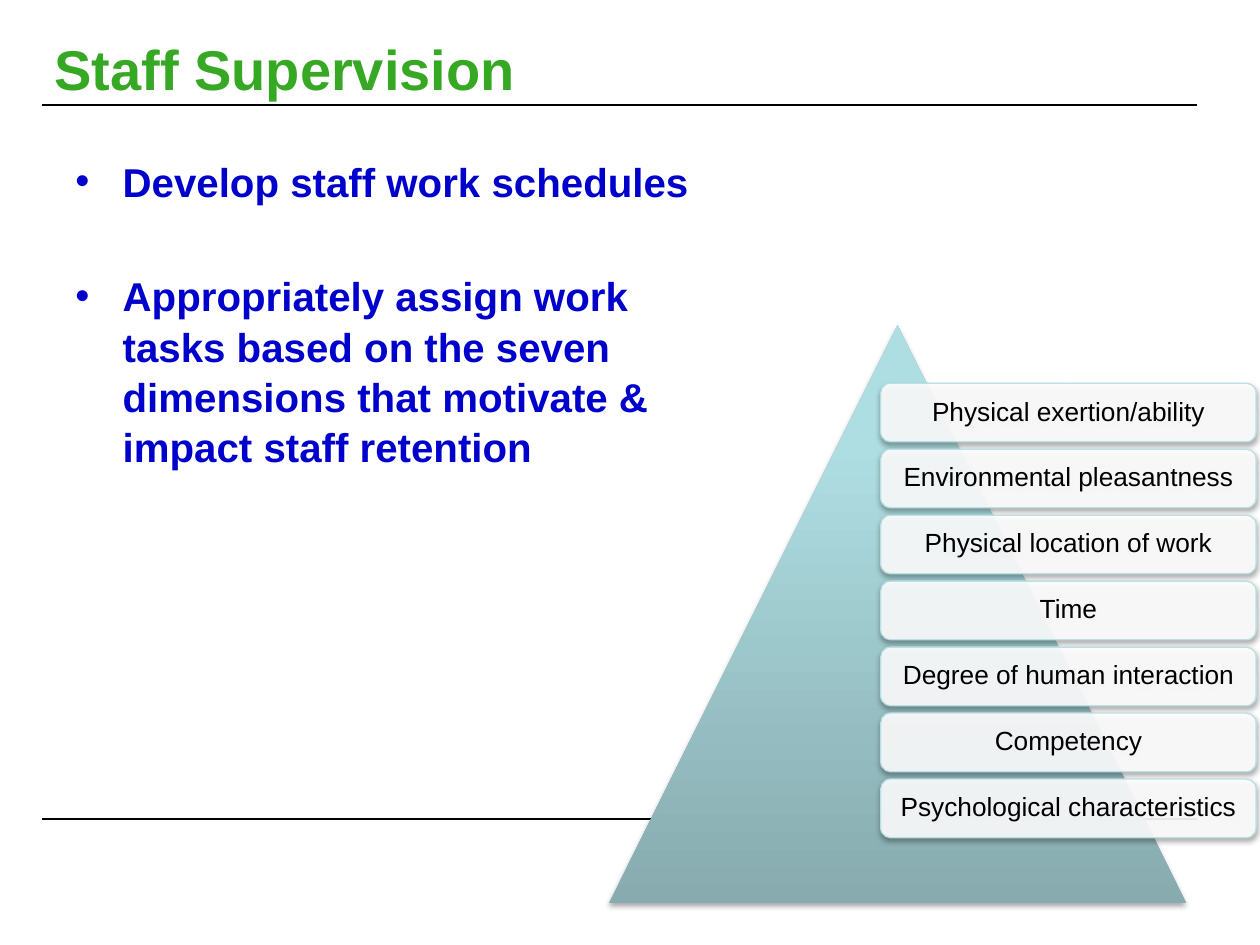
from dataclasses import dataclass

from lxml import etree
from pptx import Presentation
from pptx import util as u
from pptx.dml.color import RGBColor
from pptx.enum import shapes, text
from pptx.oxml import parse_xml
from pptx.oxml.ns import nsdecls, qn

COLORS = {
    "title": "37A824", "body": "0000CC", "ink": "000000", "card": "FFFFFF",
    "border": "BBE0E3", "deep": "87ABAE", "mid": "AFDEE2", "pale": "AFE0E4",
}
BULLETS = [
    "Develop staff work schedules",
    "Appropriately assign work tasks based on the seven dimensions "
    "that motivate & impact staff retention",
]
DIMENSIONS = [
    "Physical exertion/ability", "Environmental pleasantness",
    "Physical location of work", "Time", "Degree of human interaction",
    "Competency", "Psychological characteristics",
]
CARD_TOP, CARD_PITCH = 219, 37.7


@dataclass(frozen=True)
class Box:
    left: float
    top: float
    width: float
    height: float

    def lengths(self) -> list:
        return [u.Pt(v) for v in (self.left, self.top, self.width, self.height)]


def rgb(name: str) -> RGBColor:
    return RGBColor.from_string(COLORS[name])


def write_text(shape, lines: list[str], *, size: float, color: str, bold=False,
               align=text.PP_ALIGN.LEFT, anchor=text.MSO_ANCHOR.TOP,
               spacing=1.0, gap=0.0, bullet="", indent=0.0, inset=(7.2, 3.6)) -> None:
    frame = shape.text_frame
    frame.word_wrap = True
    frame.vertical_anchor = anchor
    frame.margin_left = frame.margin_right = u.Pt(inset[0])
    frame.margin_top = frame.margin_bottom = u.Pt(inset[1])
    for index, line in enumerate(lines):
        paragraph = frame.add_paragraph() if index else frame.paragraphs[0]
        paragraph.alignment = align
        paragraph.line_spacing = spacing
        if index:
            paragraph.space_before = u.Pt(gap)
        if bullet:
            properties = paragraph._p.get_or_add_pPr()
            properties.set("marL", str(u.Pt(indent)))
            properties.set("indent", str(-u.Pt(indent)))
            etree.SubElement(properties, qn("a:buFont")).set("typeface", "Arial")
            etree.SubElement(properties, qn("a:buChar")).set("char", bullet)
        run = paragraph.add_run()
        run.text = line
        run.font.name = "Arial"
        run.font.size = u.Pt(size)
        run.font.bold = bold
        run.font.color.rgb = rgb(color)


def add_rule(slide, y: float) -> None:
    line = slide.shapes.add_connector(
        shapes.MSO_CONNECTOR.STRAIGHT, u.Pt(24), u.Pt(y), u.Pt(684), u.Pt(y))
    line.line.color.rgb = rgb("ink")
    line.line.width = u.Pt(0.75)
    etree.SubElement(line._element.spPr, qn("a:effectLst"))


def add_shadow(shape) -> None:
    shape._element.spPr.append(parse_xml(
        f'<a:effectLst {nsdecls("a")}><a:outerShdw blurRad="{u.Pt(3.1)}" '
        f'dist="{u.Pt(1.8)}" dir="5400000" rotWithShape="0">'
        f'<a:srgbClr val="{COLORS["ink"]}"><a:alpha val="35000"/></a:srgbClr>'
        '</a:outerShdw></a:effectLst>'))


def add_pyramid(slide, box: Box) -> None:
    pyramid = slide.shapes.add_shape(
        shapes.MSO_SHAPE.ISOSCELES_TRIANGLE, *box.lengths())
    stops = "".join(
        f'<a:gs pos="{position * 1000}"><a:srgbClr val="{COLORS[name]}"/></a:gs>'
        for position, name in ((0, "deep"), (80, "mid"), (100, "pale")))
    pyramid._element.spPr.append(parse_xml(
        f'<a:gradFill {nsdecls("a")} rotWithShape="1"><a:gsLst>{stops}</a:gsLst>'
        '<a:lin ang="16200000" scaled="0"/></a:gradFill>'))
    pyramid.line.fill.background()
    add_shadow(pyramid)


def add_card(slide, box: Box, label: str) -> None:
    card = slide.shapes.add_shape(shapes.MSO_SHAPE.ROUNDED_RECTANGLE, *box.lengths())
    card.fill.solid()
    card.fill.fore_color.rgb = rgb("card")
    fill_color = card._element.spPr.find(qn("a:solidFill")).find(qn("a:srgbClr"))
    etree.SubElement(fill_color, qn("a:alpha")).set("val", "90000")
    card.line.color.rgb = rgb("border")
    card.line.width = u.Pt(0.75)
    add_shadow(card)
    write_text(card, [label], size=15, color="ink", align=text.PP_ALIGN.CENTER,
               anchor=text.MSO_ANCHOR.MIDDLE, spacing=0.9, inset=(4.5, 4.5))


def main() -> None:
    """Build the staff supervision slide."""
    presentation = Presentation()
    presentation.slide_width, presentation.slide_height = u.Pt(720), u.Pt(540)
    slide = presentation.slides.add_slide(presentation.slide_layouts[6])
    for y in (468, 60):
        add_rule(slide, y)
    title = slide.shapes.add_textbox(*Box(24, -6, 648, 90).lengths())
    write_text(title, ["Staff Supervision"], size=32, color="title", bold=True,
               anchor=text.MSO_ANCHOR.MIDDLE)
    body = slide.shapes.add_textbox(*Box(36, 85, 368, 336).lengths())
    write_text(body, BULLETS, size=23, color="body", bold=True, spacing=1.04,
               gap=37, bullet="•", indent=27)
    add_pyramid(slide, Box(348, 186, 330, 330))
    for index, label in enumerate(DIMENSIONS):
        add_card(slide, Box(503.3, CARD_TOP + index * CARD_PITCH, 214.5, 33.5), label)
    presentation.save("out.pptx")


if __name__ == "__main__":
    main()
